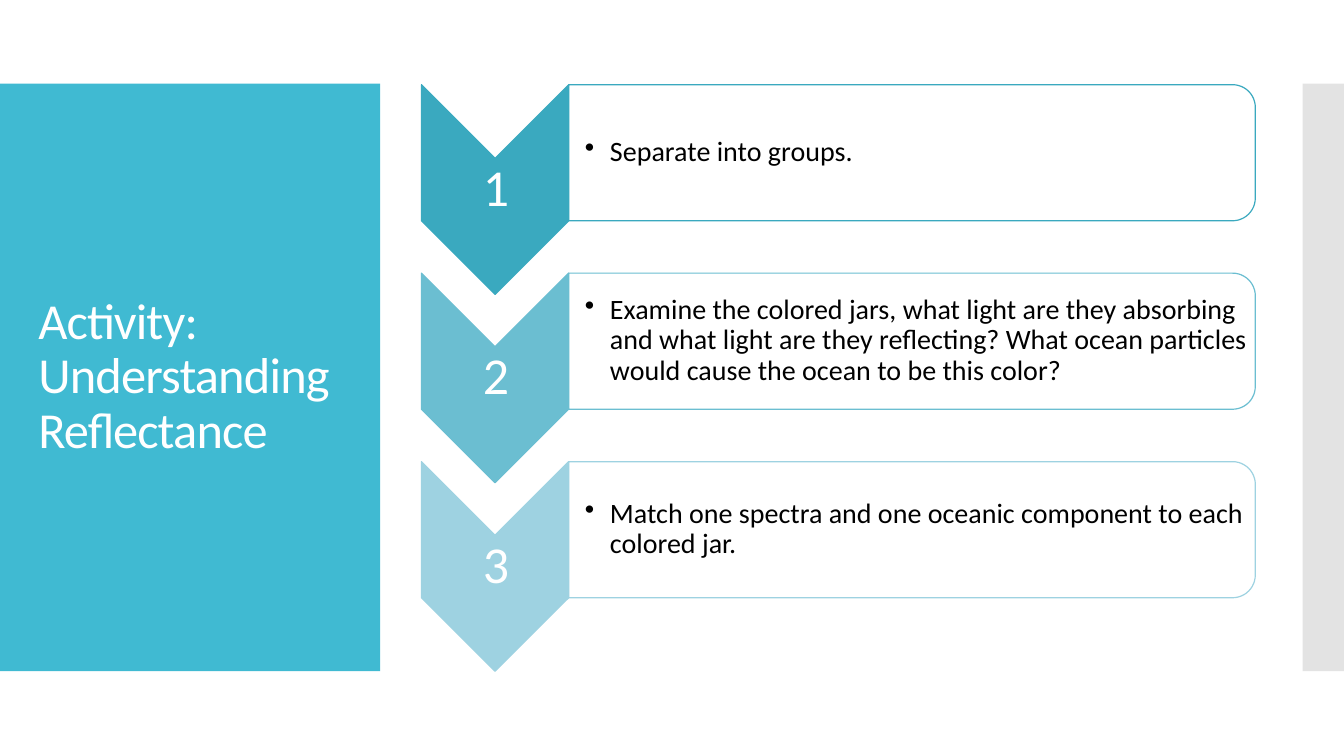
"""Build the slide of a three-step reflectance activity."""
from dataclasses import dataclass

from lxml.etree import SubElement as Sub
from pptx import Presentation
from pptx.dml.color import RGBColor as Rgb
from pptx.enum.shapes import MSO_SHAPE as Kind
from pptx.enum.text import MSO_ANCHOR as Anchor
from pptx.enum.text import MSO_AUTO_SIZE as Fit
from pptx.enum.text import PP_ALIGN as Align
from pptx.oxml.ns import qn
from pptx.util import Pt

PX = 9144


@dataclass(frozen=True)
class Theme:
    """Hold the colours, font and type sizes."""
    font: str = "Calibri"
    panel: str = "40BAD2"
    edge: str = "C8C8C8"
    white: str = "FFFFFF"
    ink: str = "000000"
    title: int = 36
    digit: int = 37
    body: int = 20
    line: float = 0.85


@dataclass(frozen=True)
class Box:
    """Hold a place and size in px."""
    left: int
    top: int
    width: int
    height: int

    def emu(self) -> list[int]:
        """Give the four lengths in EMU."""
        return [n * PX for n in (self.left, self.top, self.width, self.height)]

    def down(self, step: int) -> "Box":
        """Give the same box moved down."""
        return Box(self.left, self.top + step, self.width, self.height)


@dataclass(frozen=True)
class Step:
    """Hold the colour and text of one step."""
    color: str
    text: str


THEME = Theme()
PITCH = 187
PANEL = Box(0, 83, 377, 583)
EDGE = Box(1292, 83, 42, 583)
TITLE = Box(28, 123, 322, 503)
ARROW = Box(387, 115, 208, 146)
DIGIT = Box(419, 157, 146, 62)
CARD = Box(837, -189, 135, 681)
BODY = Box(564, 90, 675, 122)
STEPS = [
    Step("3AA9BF", "Separate into groups."),
    Step("6BBED1", "Examine the colored jars, what light are they absorbing and "
         "what light are they reflecting? What ocean particles would cause "
         "the ocean to be this color?"),
    Step("9ED2E1", "Match one spectra and one oceanic component to each colored jar."),
]


def draw(slide, kind: Kind, box: Box, fill: str, line: str = "",
         alpha: int = 100, turn: int = 0) -> None:
    """Draw a preset shape."""
    shape = slide.shapes.add_shape(kind, *box.emu())
    shape.shadow.inherit = False
    shape.rotation = turn
    shape.fill.solid()
    shape.fill.fore_color.rgb = Rgb.from_string(fill)
    if alpha < 100:
        tone = shape.element.spPr.find(qn("a:solidFill"))[0]
        Sub(tone, qn("a:alpha"), val=str(alpha * 1000))
    if line:
        shape.line.color.rgb = Rgb.from_string(line)
        shape.line.width = Pt(THEME.line)
    else:
        shape.line.fill.background()


def write(shape, text: str, *, size: int, color: str, inset: tuple[int, int],
          align: Align = Align.LEFT, after: int = 0, track: int = 0,
          bullet: bool = False) -> None:
    """Write one formatted paragraph, with left and other insets in px."""
    frame = shape.text_frame
    frame.word_wrap = True
    frame.auto_size = Fit.NONE
    frame.vertical_anchor = Anchor.MIDDLE
    frame.margin_left = inset[0] * PX
    frame.margin_top = frame.margin_right = frame.margin_bottom = inset[1] * PX
    para = frame.paragraphs[0]
    para.alignment = align
    para.line_spacing = 0.9
    props = para._p.get_or_add_pPr()
    if after:
        Sub(Sub(props, qn("a:spcAft")), qn("a:spcPct"), val=str(after * 1000))
    if bullet:
        para.level = 1
        props.set("marL", str(25 * PX))
        props.set("indent", str(-25 * PX))
        Sub(props, qn("a:buChar"), char="•")
    run = para.add_run()
    run.text = text
    run.font.name = THEME.font
    run.font.size = Pt(size)
    run.font.color.rgb = Rgb.from_string(color)
    if track:
        run._r.get_or_add_rPr().set("spc", str(track))


def head(slide) -> None:
    """Set the title above the side panel."""
    title = slide.shapes.title
    title.left, title.top, title.width, title.height = TITLE.emu()
    title.element.getparent().append(title.element)
    write(title, "Activity: Understanding Reflectance", size=THEME.title,
          color=THEME.white, inset=(10, 5), track=-60)


def row(slide, index: int, step: Step) -> None:
    """Draw one numbered step."""
    drop = index * PITCH
    draw(slide, Kind.CHEVRON, ARROW.down(drop), step.color, step.color, turn=90)
    digit = slide.shapes.add_textbox(*DIGIT.down(drop).emu())
    write(digit, str(index + 1), size=THEME.digit, color=THEME.white,
          inset=(3, 3), align=Align.CENTER, after=35)
    draw(slide, Kind.ROUND_2_SAME_RECTANGLE, CARD.down(drop), THEME.white,
         step.color, alpha=90, turn=90)
    body = slide.shapes.add_textbox(*BODY.down(drop).emu())
    write(body, step.text, size=THEME.body, color=THEME.ink, inset=(16, 1),
          after=15, bullet=True)


def main() -> None:
    """Build and save the deck."""
    deck = Presentation()
    deck.slide_width, deck.slide_height = 1333 * PX, 750 * PX
    slide = deck.slides.add_slide(deck.slide_layouts.get_by_name("Title Only"))
    draw(slide, Kind.RECTANGLE, PANEL, THEME.panel)
    draw(slide, Kind.RECTANGLE, EDGE, THEME.edge, alpha=50)
    head(slide)
    for index, step in enumerate(STEPS):
        row(slide, index, step)
    deck.save("out.pptx")


if __name__ == "__main__":
    main()
